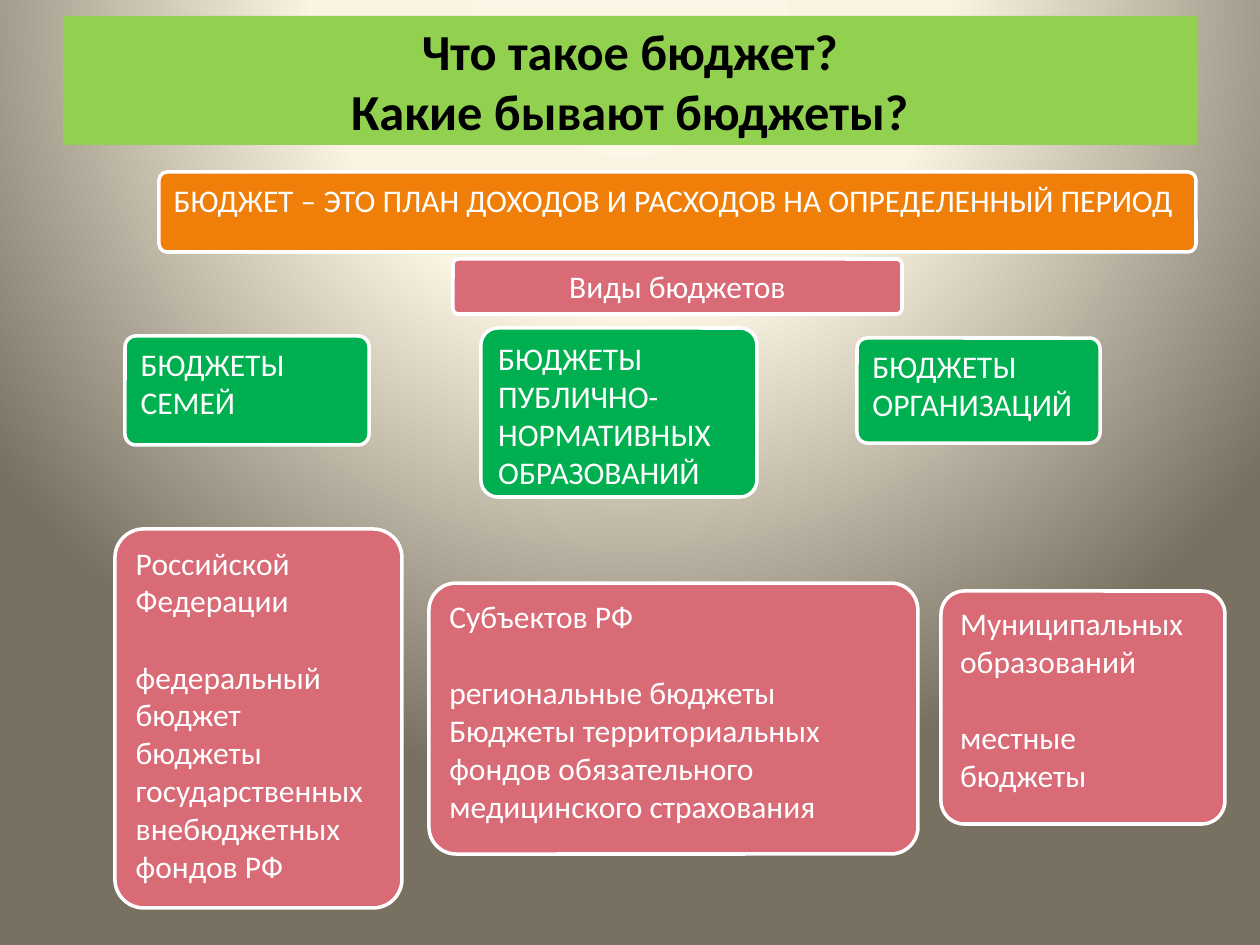
from pptx import Presentation
from pptx.dml.color import RGBColor
from pptx.enum.shapes import MSO_SHAPE as Shape
from pptx.enum.text import MSO_ANCHOR as Anchor, PP_ALIGN as Align
from pptx.oxml import parse_xml
from pptx.oxml.ns import nsdecls
from pptx.util import Emu, Pt

EMU_PER_PX = 914400 / 126
COLORS = {
    "title": "92D050",
    "definition": "F07F09",
    "owner": "00B050",
    "level": "D96B77",
    "light": "FFFFFF",
    "dark": "000000",
    "glow": "FCF6E6",
    "cream": "FBF4E2",
    "olive": "787161",
}
BODY_FONT = {"name": "Calibri", "size": Pt(18), "bold": False}
TITLE_FONT = {"name": "Calibri", "size": Pt(28.8), "bold": True}
SECTION_GAP = Pt(22)

CARDS = [
    ("definition", (159, 172, 1037, 80), Align.LEFT,
     [["БЮДЖЕТ – ЭТО ПЛАН ДОХОДОВ И РАСХОДОВ НА ОПРЕДЕЛЕННЫЙ ПЕРИОД"]]),
    ("owner", (125, 336, 244, 109), Align.LEFT, [["БЮДЖЕТЫ СЕМЕЙ"]]),
    ("owner", (481, 328, 276, 169), Align.LEFT,
     [["БЮДЖЕТЫ ПУБЛИЧНО-НОРМАТИВНЫХ ОБРАЗОВАНИЙ"]]),
    ("level", (115, 529, 287, 379), Align.LEFT,
     [["Российской Федерации"],
      ["федеральный бюджет",
       "бюджеты государственных внебюджетных фондов РФ"]]),
    ("owner", (857, 338, 243, 105), Align.LEFT, [["БЮДЖЕТЫ ОРГАНИЗАЦИЙ"]]),
    ("level", (429, 583, 489, 271), Align.LEFT,
     [["Субъектов РФ"],
      ["региональные бюджеты",
       "Бюджеты территориальных фондов обязательного медицинского страхования"]]),
    ("level", (941, 591, 284, 233), Align.LEFT,
     [["Муниципальных образований"], ["местные бюджеты"]]),
    ("level", (453, 259, 449, 55), Align.CENTER, [["Виды бюджетов"]]),
]


def px(length):
    return Emu(round(length * EMU_PER_PX))


def rgb(name):
    return RGBColor.from_string(COLORS[name])


def paint_background(slide):
    stops = "".join(
        f'<a:gs pos="{percent * 1000}"><a:srgbClr val="{COLORS[name]}"/></a:gs>'
        for percent, name in ((0, "glow"), (40, "cream"), (100, "olive"))
    )
    slide._element.cSld.insert(0, parse_xml(
        f'<p:bg {nsdecls("p", "a")}><p:bgPr><a:gradFill rotWithShape="1">'
        f'<a:gsLst>{stops}</a:gsLst><a:path path="circle">'
        '<a:fillToRect l="50000" t="-80000" r="50000" b="180000"/></a:path>'
        '</a:gradFill><a:effectLst/></p:bgPr></p:bg>'
    ))


def add_panel(slide, outline, box, color):
    panel = slide.shapes.add_shape(outline, *map(px, box))
    panel.shadow.inherit = False
    panel.fill.solid()
    panel.fill.fore_color.rgb = rgb(color)
    return panel


def write_sections(panel, sections, font_format, color, align, anchor):
    frame = panel.text_frame
    frame.word_wrap = True
    frame.vertical_anchor = anchor
    lines = [(line, section > 0 and place == 0)
             for section, group in enumerate(sections)
             for place, line in enumerate(group)]
    for number, (line, opens_section) in enumerate(lines):
        paragraph = frame.add_paragraph() if number else frame.paragraphs[0]
        paragraph.text = line
        paragraph.alignment = align
        if opens_section:
            paragraph.space_before = SECTION_GAP
        for attribute, value in font_format.items():
            setattr(paragraph.font, attribute, value)
        paragraph.font.color.rgb = rgb(color)


def add_title(slide):
    banner = add_panel(slide, Shape.RECTANGLE, (63, 16, 1134, 129), "title")
    banner.line.fill.background()
    write_sections(banner, [["Что такое бюджет?\vКакие бывают бюджеты?"]],
                   TITLE_FONT, "dark", Align.CENTER, Anchor.MIDDLE)


def add_card(slide, color, box, align, sections):
    card = add_panel(slide, Shape.ROUNDED_RECTANGLE, box, color)
    card.adjustments[0] = 0.1
    card.line.color.rgb = rgb("light")
    card.line.width = Pt(2)
    write_sections(card, sections, BODY_FONT, "light", align, Anchor.TOP)


def main():
    deck = Presentation()
    deck.slide_width, deck.slide_height = px(1260), px(945)
    slide = deck.slides.add_slide(deck.slide_layouts[6])
    paint_background(slide)
    add_title(slide)
    for card in CARDS:
        add_card(slide, *card)
    deck.save("out.pptx")


if __name__ == "__main__":
    main()
